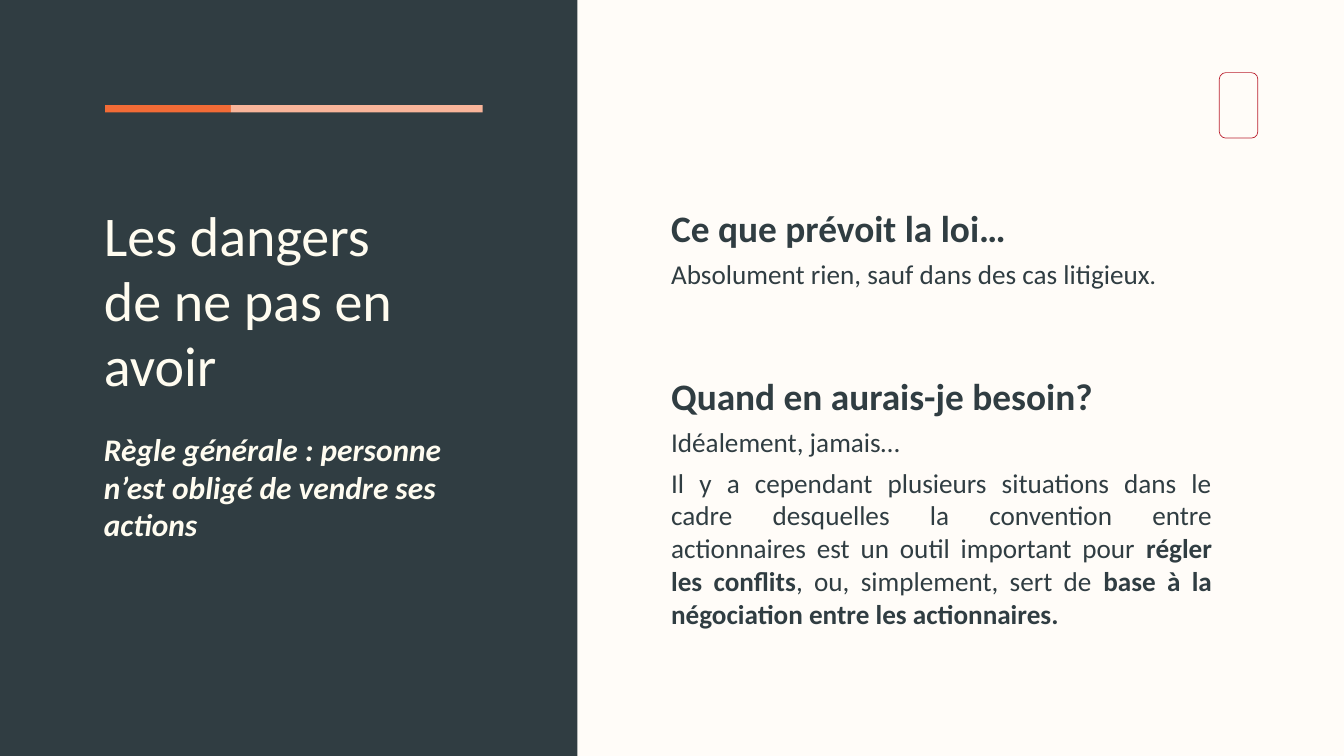
"""Build the slide on the dangers of having no shareholder agreement."""
from pptx import Presentation
from pptx.dml.color import RGBColor
from pptx.enum.shapes import MSO_SHAPE as SHAPE
from pptx.enum.text import MSO_ANCHOR as ANCHOR, MSO_AUTO_SIZE as AUTO, PP_ALIGN as ALIGN
from pptx.util import Cm, Pt

WIDTH, HEIGHT = 55.85, 31.42
DARK, CREAM, PAPER = "303D42", "FFFCF0", "FFFCF8"
ORANGE, PEACH, RED = "F26B36", "F9B59A", "BA2130"
LEFT, BAR_LEFT, BAR_UNIT = 4.32, 4.37, 5.23
RIGHT, INSET = 27.89, 0.51

TITLE = "Les dangers de ne pas en avoir"
RULE = "Règle générale : personne n’est obligé de vendre ses actions"
SECTIONS = [
    ((RIGHT, 8, 23.37, 4.06), "Ce que prévoit la loi…", [
        (ALIGN.JUSTIFY, [("Absolument rien, sauf dans des cas litigieux", False, "Calibri"),
                         (".", False, "Karla")]),
    ]),
    ((RIGHT, 14.99, 22.48, 11.28), "Quand en aurais-je besoin?", [
        (ALIGN.LEFT, [("Idéalement, jamais…", False, "Calibri")]),
        (ALIGN.JUSTIFY, [
            ("Il y a cependant plusieurs situations dans le cadre desquelles la convention "
             "entre actionnaires est un outil important pour ", False, "Calibri"),
            ("régler les conflits", True, "Calibri"),
            (", ou, simplement, sert de ", False, "Calibri"),
            ("base à la négociation entre les actionnaires.", True, "Calibri"),
        ]),
    ]),
]


def color(value):
    return RGBColor.from_string(value)


def add_block(s, kind, box, fill=None, line=None):
    sp = s.shapes.add_shape(kind, *map(Cm, box))
    sp.shadow.inherit = False
    if fill:
        sp.fill.solid()
        sp.fill.fore_color.rgb = color(fill)
    else:
        sp.fill.background()
    if line:
        sp.line.color.rgb = color(line)
        sp.line.width = Pt(0.82)
    else:
        sp.line.fill.background()


def set_frame(sp, top=0):
    tf = sp.text_frame
    tf.word_wrap = True
    tf.auto_size = AUTO.NONE
    tf.vertical_anchor = ANCHOR.TOP
    tf.margin_left = tf.margin_right = tf.margin_bottom = 0
    tf.margin_top = Cm(top)
    return tf


def set_paragraph(p, size, value, bold=False, italic=False, align=ALIGN.LEFT):
    p.alignment = align
    f = p.font
    f.name, f.size, f.bold, f.italic = "Calibri", Pt(size), bold, italic
    f.color.rgb = color(value)


def add_section(s, box, heading, paragraphs):
    tf = set_frame(s.shapes.add_textbox(*map(Cm, box)), INSET)
    tf.text = heading
    set_paragraph(tf.paragraphs[0], 44, DARK, bold=True)
    for align, runs in paragraphs:
        p = tf.add_paragraph()
        set_paragraph(p, 32, DARK, align=align)
        p.space_before = Pt(8.8)
        p.line_spacing = 1.01
        for text, bold, font in runs:
            r = p.add_run()
            r.text = text
            r.font.bold = bold
            r.font.name = font


def main():
    prs = Presentation()
    prs.slide_width, prs.slide_height = Cm(WIDTH), Cm(HEIGHT)
    s = prs.slides.add_slide(prs.slide_layouts[5])
    s.background.fill.solid()
    s.background.fill.fore_color.rgb = color(PAPER)

    add_block(s, SHAPE.RECTANGLE, (0, 0, 24, HEIGHT), DARK)
    add_block(s, SHAPE.RECTANGLE, (BAR_LEFT, 4.37, BAR_UNIT, 0.3), ORANGE)
    add_block(s, SHAPE.RECTANGLE, (BAR_LEFT + BAR_UNIT, 4.37, 2 * BAR_UNIT, 0.3), PEACH)
    add_block(s, SHAPE.ROUNDED_RECTANGLE, (50.67, 3.02, 1.6, 2.72), line=RED)

    title = s.shapes.title
    title.left, title.top, title.width, title.height = map(Cm, (LEFT, 8.43, 13.46, 8.26))
    s.shapes._spTree.append(title._element)
    tf = set_frame(title)
    tf.text = TITLE
    set_paragraph(tf.paragraphs[0], 66, CREAM)
    tf.paragraphs[0].line_spacing = Pt(76.7)

    tf = set_frame(s.shapes.add_textbox(*map(Cm, (LEFT, 17.88, 15.7, 4.78))))
    tf.text = RULE
    set_paragraph(tf.paragraphs[0], 37, CREAM, bold=True, italic=True)

    for section in SECTIONS:
        add_section(s, *section)
    prs.save("out.pptx")


if __name__ == "__main__":
    main()
